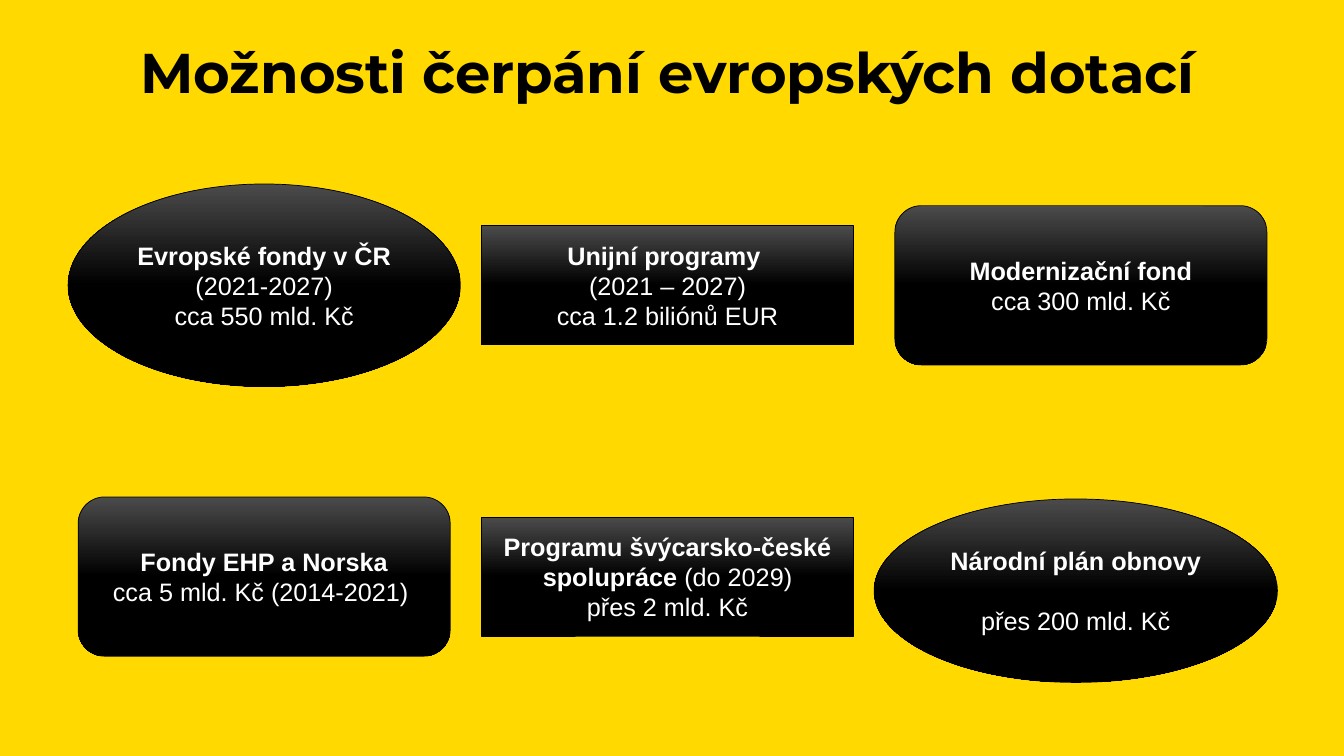
from copy import deepcopy

from pptx import Presentation
from pptx.dml.color import RGBColor
from pptx.enum.shapes import MSO_SHAPE
from pptx.enum.text import MSO_ANCHOR, PP_ALIGN
from pptx.util import Inches, Pt

YELLOW = RGBColor(0xFF, 0xD9, 0x00)
BLACK = RGBColor(0x00, 0x00, 0x00)
GREY = RGBColor(0x4B, 0x4B, 0x4B)
WHITE = RGBColor(0xFF, 0xFF, 0xFF)

TITLE = "Možnosti čerpání evropských dotací"
COLUMNS = (2.62, 6.62, 10.72)
ROWS = (2.83, 5.72)
OVAL, BOX, ROUNDED = MSO_SHAPE.OVAL, MSO_SHAPE.RECTANGLE, MSO_SHAPE.ROUNDED_RECTANGLE
SIZES = {BOX: (3.69, 1.18), ROUNDED: (3.69, 1.58)}
EU_OVAL = (3.89, 2.01)
RECOVERY_OVAL = (4, 1.82)
RECOVERY_SHIFT = (-0.05, 0.14)

# (column, row, shape, size, shift, gap after the heading, paragraphs of (text, bold))
FUNDS = [
    (0, 0, OVAL, EU_OVAL, (0, 0), 0,
     [[("Evropské fondy v ČR ", True), ("(2021-2027)", False)],
      [("cca 550 mld. Kč", False)]]),
    (0, 1, ROUNDED, SIZES[ROUNDED], (0, 0), 0,
     [[("Fondy EHP a Norska", True)],
      [("cca 5 mld. Kč (2014-2021) ", False)]]),
    (1, 0, BOX, SIZES[BOX], (0, 0), 0,
     [[("Unijní programy ", True)],
      [("(2021 – 2027)", False)],
      [("cca 1.2 biliónů EUR", False)]]),
    (2, 1, OVAL, RECOVERY_OVAL, RECOVERY_SHIFT, 21,
     [[("Národní plán obnovy", True)],
      [("přes 200 mld. Kč", False)]]),
    (2, 0, ROUNDED, SIZES[ROUNDED], (0, 0), 0,
     [[("Modernizační fond", True)],
      [("cca 300 mld. Kč", False)]]),
    (1, 1, BOX, SIZES[BOX], (0, 0), 0,
     [[("Programu švýcarsko-české spolupráce ", True), ("(do 2029)", False)],
      [("přes 2 mld. Kč", False)]]),
]


def style_paragraph(p, font, size, color):
    """Centre a paragraph and set its font."""
    p.alignment = PP_ALIGN.CENTER
    p.font.name, p.font.size = font, Pt(size)
    p.font.color.rgb = color


def shade(sp):
    """Give a shape the grey-to-black gradient and thin black outline."""
    sp.shadow.inherit = False
    sp.line.color.rgb, sp.line.width = BLACK, Pt(0.5)
    sp.fill.gradient()
    sp.fill.gradient_angle = 270
    stops = sp.fill.gradient_stops
    for stop, color, position in zip(stops, (GREY, BLACK), (0, 0.5)):
        stop.color.rgb, stop.position = color, position
    gs_list = sp.fill._fill._gradFill.gsLst
    last = deepcopy(gs_list[-1])
    last.set("pos", "100000")
    gs_list.append(last)


def add_title(s):
    """Place the heading across the top."""
    tf = s.shapes.add_textbox(Inches(0.46), Inches(0.4), Inches(12.32), Inches(1.02)).text_frame
    tf.word_wrap = True
    p = tf.paragraphs[0]
    p.text, p.line_spacing = TITLE, 0.9
    style_paragraph(p, "Montserrat", 40, BLACK)
    p.font.bold = True


def add_fund(s, col, row, kind, size, shift, gap, paragraphs):
    """Place one fund centred on its grid point."""
    w, h = size
    x, y = COLUMNS[col] + shift[0], ROWS[row] + shift[1]
    sp = s.shapes.add_shape(kind, Inches(x - w / 2), Inches(y - h / 2), Inches(w), Inches(h))
    shade(sp)
    tf = sp.text_frame
    tf.word_wrap, tf.vertical_anchor = True, MSO_ANCHOR.MIDDLE
    for i, runs in enumerate(paragraphs):
        p = tf.add_paragraph() if i else tf.paragraphs[0]
        style_paragraph(p, "Arial", 18, WHITE)
        if i and gap:
            p.space_before = Pt(gap)
        for text, bold in runs:
            r = p.add_run()
            r.text, r.font.bold = text, bold


def main():
    """Build the slide and save it."""
    prs = Presentation()
    prs.slide_width, prs.slide_height = Inches(13.33), Inches(7.5)
    s = prs.slides.add_slide(prs.slide_layouts[6])
    s.background.fill.solid()
    s.background.fill.fore_color.rgb = YELLOW
    add_title(s)
    for fund in FUNDS:
        add_fund(s, *fund)
    prs.save("out.pptx")


if __name__ == "__main__":
    main()
